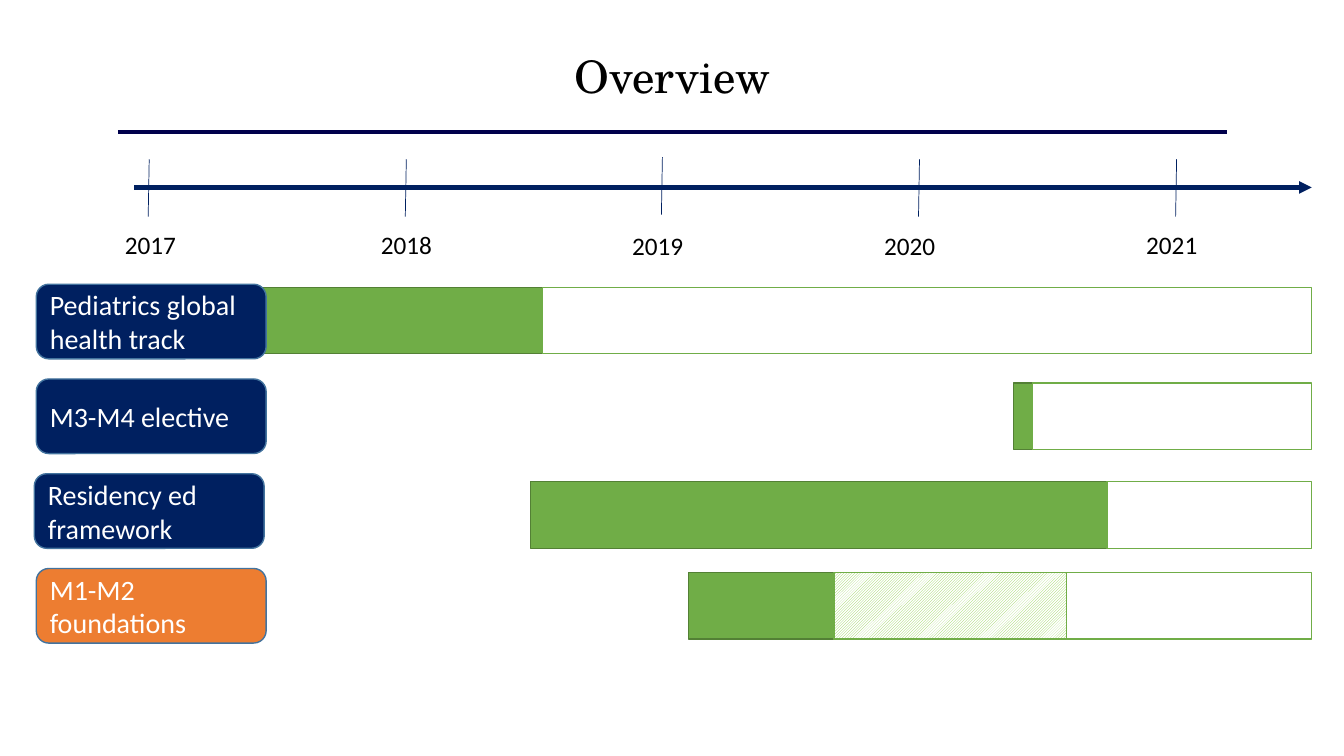
from lxml.etree import SubElement
from pptx import Presentation
from pptx.dml.color import RGBColor
from pptx.enum.dml import MSO_PATTERN
from pptx.enum.shapes import MSO_CONNECTOR, MSO_SHAPE
from pptx.enum.text import MSO_ANCHOR, PP_ALIGN
from pptx.oxml.ns import qn
from pptx.util import Inches, Pt

BLACK = RGBColor(0x00, 0x00, 0x00)
WHITE = RGBColor(0xFF, 0xFF, 0xFF)
NAVY = RGBColor(0x00, 0x20, 0x60)
RULE = RGBColor(0x00, 0x00, 0x4C)
STEEL = RGBColor(0x43, 0x73, 0x9E)
ORANGE = RGBColor(0xED, 0x7D, 0x31)
GREEN = RGBColor(0x70, 0xAD, 0x47)
MOSS = RGBColor(0x53, 0x80, 0x35)
LIME = RGBColor(0x92, 0xD0, 0x50)

END = 13.01  # right end of the time axis and of every bar

# Year, tick foot, tick top, label left, label top
YEARS = [
    ("2017", 1.47, 1.58, 1.14, 2.23),
    ("2018", 4.02, 1.58, 3.68, 2.23),
    ("2019", 6.56, 1.56, 6.17, 2.24),
    ("2020", 9.11, 1.58, 8.67, 2.24),
    ("2021", 11.66, 1.58, 11.27, 2.23),
]

# Label, label left, label top, label fill, bar top, (bar style, start) in order
TRACKS = [
    ("Pediatrics global health track", 0.36, 2.82, NAVY, 2.85,
     [("done", 2.58), ("open", 5.38)]),
    ("M3-M4 elective", 0.36, 3.76, NAVY, 3.8,
     [("done", 10.05), ("open", 10.24)]),
    ("Residency ed framework", 0.34, 4.7, NAVY, 4.78,
     [("done", 5.26), ("open", 10.98)]),
    ("M1-M2 foundations", 0.36, 5.64, ORANGE, 5.68,
     [("done", 6.83), ("partial", 8.27), ("open", 10.58)]),
]


def add_run(para, text, size, color, font="Calibri"):
    run = para.add_run()
    run.text = text
    run.font.size = Pt(size)
    run.font.name = font
    run.font.color.rgb = color


def add_text(slide, text, left, top, width, height, size, font="Calibri"):
    box = slide.shapes.add_textbox(
        Inches(left), Inches(top), Inches(width), Inches(height))
    box.text_frame.word_wrap = True
    para = box.text_frame.paragraphs[0]
    add_run(para, text, size, BLACK, font)
    return box


def add_line(slide, x1, y1, x2, y2, color, width, arrow=False):
    line = slide.shapes.add_connector(
        MSO_CONNECTOR.STRAIGHT, Inches(x1), Inches(y1), Inches(x2), Inches(y2))
    line.line.color.rgb = color
    line.line.width = Pt(width)
    if arrow:
        SubElement(line.line._get_or_add_ln(), qn("a:tailEnd"), type="triangle")
    SubElement(line._element.spPr, qn("a:effectLst"))


def add_box(slide, kind, left, top, width, height, edge):
    box = slide.shapes.add_shape(
        kind, Inches(left), Inches(top), Inches(width), Inches(height))
    box.shadow.inherit = False
    box.line.color.rgb = edge
    box.line.width = Pt(1)
    return box


def add_bar(slide, style, left, right, top):
    edge = MOSS if style == "done" else GREEN
    bar = add_box(slide, MSO_SHAPE.RECTANGLE, left, top, right - left, 0.66, edge)
    if style == "partial":
        bar.fill.patterned()
        bar.fill.pattern = MSO_PATTERN.LIGHT_UPWARD_DIAGONAL
        bar.fill.fore_color.rgb = LIME
        bar.fill.back_color.rgb = WHITE
    else:
        bar.fill.solid()
        bar.fill.fore_color.rgb = GREEN if style == "done" else WHITE


def add_label(slide, text, left, top, color):
    label = add_box(
        slide, MSO_SHAPE.ROUNDED_RECTANGLE, left, top, 2.28, 0.74, STEEL)
    label.fill.solid()
    label.fill.fore_color.rgb = color
    frame = label.text_frame
    frame.word_wrap = True
    frame.vertical_anchor = MSO_ANCHOR.MIDDLE
    frame.paragraphs[0].alignment = PP_ALIGN.LEFT
    add_run(frame.paragraphs[0], text, 20, WHITE)


def main():
    deck = Presentation()
    deck.slide_width, deck.slide_height = Inches(13.33), Inches(7.5)
    slide = deck.slides.add_slide(deck.slide_layouts[6])

    # Title and rule
    title = add_text(
        slide, "Overview", 0.65, 0.47, 12.04, 0.63, 32, "TeX Gyre Schola")
    title.text_frame.vertical_anchor = MSO_ANCHOR.MIDDLE
    para = title.text_frame.paragraphs[0]
    para.alignment = PP_ALIGN.CENTER
    para.line_spacing = 0.9
    add_line(slide, 1.17, 1.31, 12.17, 1.31, RULE, 2.25)

    # Time axis
    add_line(slide, 1.33, 1.86, END, 1.86, NAVY, 3, arrow=True)
    for year, foot, tick, left, top in YEARS:
        add_line(slide, foot + 0.01, tick, foot, tick + 0.57, NAVY, 0.5)
        add_text(slide, year, left, top, 1.31, 0.41, 18)

    # Tracks: bars first, so that the label covers the start of its bar
    for text, left, top, color, level, parts in TRACKS:
        stops = [start for _, start in parts[1:]] + [END]
        for (style, start), stop in zip(parts, stops):
            add_bar(slide, style, start, stop, level)
        add_label(slide, text, left, top, color)

    deck.save("out.pptx")


if __name__ == "__main__":
    main()
